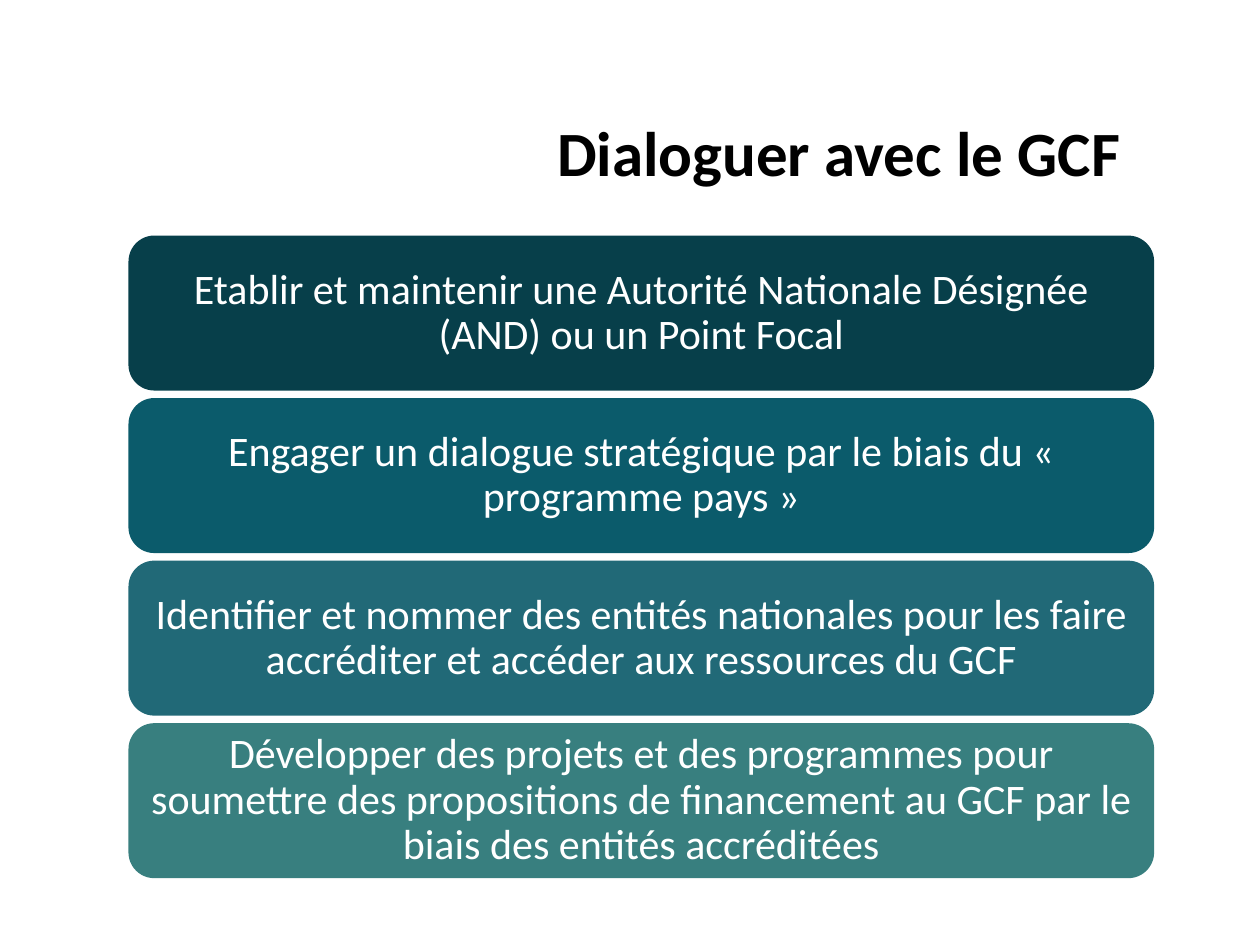
from pptx import Presentation
from pptx.dml.color import RGBColor
from pptx.enum.shapes import MSO_SHAPE
from pptx.enum.text import MSO_ANCHOR, PP_ALIGN
from pptx.util import Inches, Pt

ROUND = MSO_SHAPE.ROUNDED_RECTANGLE
TOP, MIDDLE = MSO_ANCHOR.TOP, MSO_ANCHOR.MIDDLE
CENTER, RIGHT = PP_ALIGN.CENTER, PP_ALIGN.RIGHT

COLORS = {
    "black": "000000",
    "white": "FFFFFF",
    "night": "073F4A",
    "petrol": "0B5B6B",
    "teal": "216977",
    "sage": "387F7F",
}

STEPS = [
    ("night", "Etablir et maintenir une Autorité Nationale Désignée (AND) ou un Point Focal"),
    ("petrol", "Engager un dialogue stratégique par le biais du « programme pays »"),
    ("teal", "Identifier et nommer des entités nationales pour les faire accréditer "
             "et accéder aux ressources du GCF"),
    ("sage", "Développer des projets et des programmes pour soumettre des propositions "
             "de financement au GCF par le biais des entités accréditées"),
]


def color(name):
    return RGBColor.from_string(COLORS[name])


def write(frame, text, font="Calibri", size=24, ink="white", bold=False,
          align=CENTER, anchor=MIDDLE):
    frame.word_wrap = True
    frame.vertical_anchor = anchor
    para = frame.paragraphs[0]
    para.alignment = align
    para.line_spacing = 0.9
    run = para.add_run()
    run.text = text
    run.font.name = font
    run.font.size = Pt(size)
    run.font.bold = bold
    run.font.color.rgb = color(ink)


class Deck:
    def __init__(self, font="Calibri"):
        self.font = font
        self.prs = Presentation()
        self.prs.slide_width = Inches(10)
        self.prs.slide_height = Inches(7.5)
        self.slide = self.prs.slides.add_slide(self.prs.slide_layouts[6])

    def title(self, text, *place):
        box = self.slide.shapes.add_textbox(*map(Inches, place))
        write(box.text_frame, text, font=self.font, size=36, ink="black",
              bold=True, align=RIGHT, anchor=TOP)

    def bar(self, text, fill, *place):
        shape = self.slide.shapes.add_shape(ROUND, *map(Inches, place))
        shape.shadow.inherit = False
        shape.fill.solid()
        shape.fill.fore_color.rgb = color(fill)
        shape.line.fill.background()
        write(shape.text_frame, text, font=self.font)


def main():
    deck = Deck()

    # Heading
    deck.title("Dialoguer avec le GCF", 0.85, 0.92, 8.14, 0.82)

    # Stack of steps
    left, top, width, height, gap = 1.02, 1.87, 8.14, 1.23, 0.06
    for row, (fill, text) in enumerate(STEPS):
        deck.bar(text, fill, left, top + row * (height + gap), width, height)

    deck.prs.save("out.pptx")


if __name__ == "__main__":
    main()
